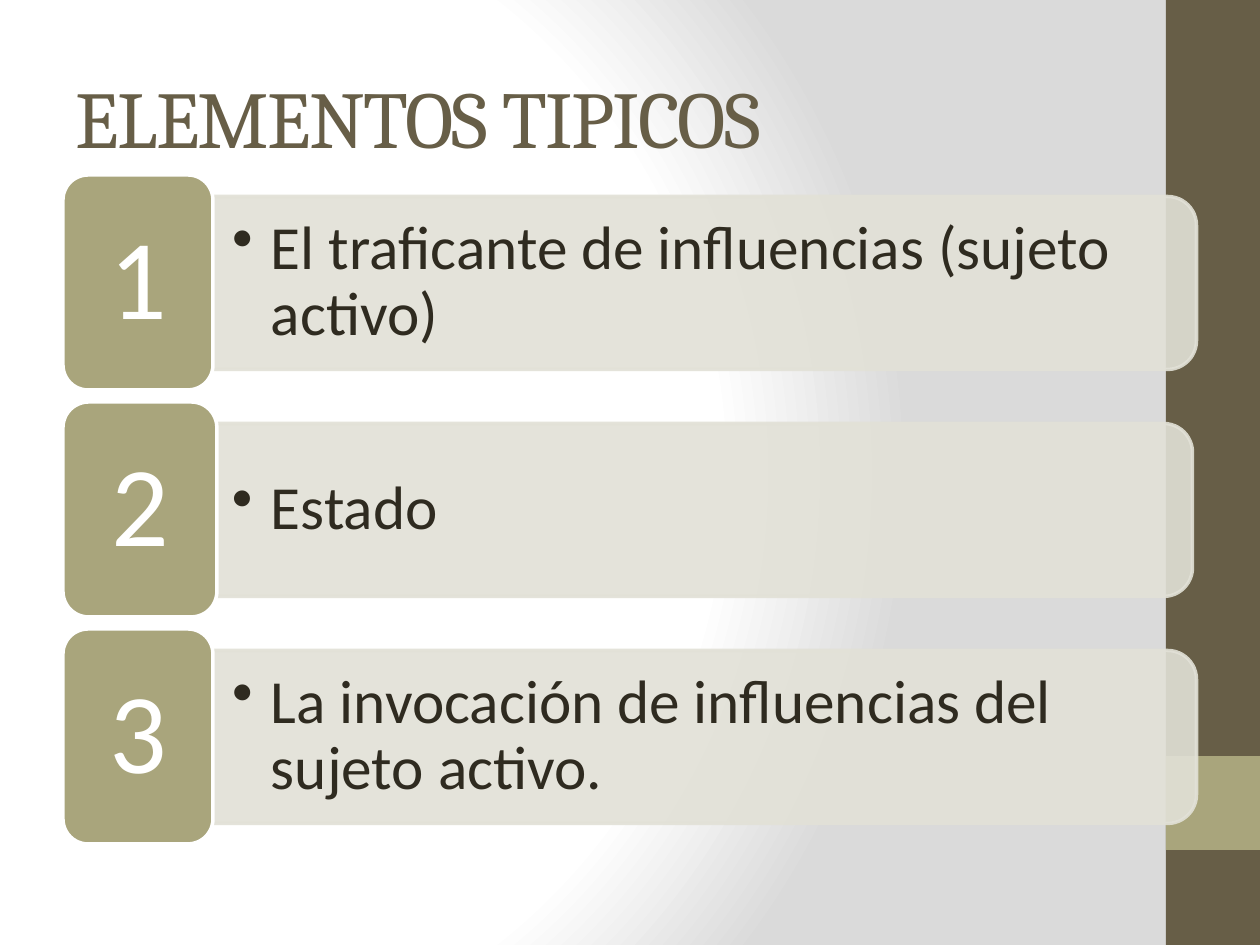
"""Build the slide of three numbered elements."""
from dataclasses import dataclass

from pptx import Presentation
from pptx import util as u
from pptx.dml.color import RGBColor
from pptx.enum import shapes, text
from pptx.oxml import parse_xml
from pptx.oxml.ns import nsdecls, qn
from pptx.oxml.xmlchemy import OxmlElement

SCALE = u.Inches(1) / 126
BROWN, KHAKI, PALE, INK, WHITE = "675E47", "A9A57C", "E2E1D7", "2F2B20", "FFFFFF"
TOP, PITCH = 175, 227
KIND = shapes.MSO_SHAPE


@dataclass
class Box:
    x: int
    y: int
    w: int
    h: int

    def emu(self) -> list[int]:
        """Return the box in EMU."""
        return [px(n) for n in (self.x, self.y, self.w, self.h)]


@dataclass
class Item:
    label: str
    tile: int
    bar: int


ITEMS = [
    Item("El traficante de influencias (sujeto activo)", 150, 984),
    Item("Estado", 154, 980),
    Item("La invocación de influencias del sujeto activo.", 150, 984),
]


def px(n: float) -> int:
    """Turn pixels into EMU."""
    return round(n * SCALE)


def rgb(code: str) -> RGBColor:
    """Turn a hex string into a colour."""
    return RGBColor.from_string(code)


def fade(fill, share: int) -> None:
    """Set the opacity of a solid fill in percent."""
    alpha = OxmlElement("a:alpha")
    alpha.set("val", str(share * 1000))
    fill._xPr.find(qn("a:solidFill"))[0].append(alpha)


def draw(slide, kind, box: Box, color: str, line: str = ""):
    """Add a filled shape, outlined if a line colour is given."""
    shape = slide.shapes.add_shape(kind, *box.emu())
    shape.shadow.inherit = False
    shape.fill.solid()
    shape.fill.fore_color.rgb = rgb(color)
    if line:
        shape.line.color.rgb = rgb(line)
        shape.line.width = u.Pt(2)
    else:
        shape.line.fill.background()
    return shape


def write(shape, words: str, font: str, size: int, color: str, align,
          pad: tuple[int, int]):
    """Put one paragraph in a shape, centred in height."""
    frame = shape.text_frame
    frame.word_wrap = True
    frame.auto_size = text.MSO_AUTO_SIZE.NONE
    frame.vertical_anchor = text.MSO_ANCHOR.MIDDLE
    frame.margin_left = frame.margin_right = px(pad[0])
    frame.margin_top = frame.margin_bottom = px(pad[1])
    para = frame.paragraphs[0]
    para.text = words
    para.alignment = align
    para.font.name, para.font.size = font, u.Pt(size)
    para.font.color.rgb = rgb(color)
    return para


def bullet(para) -> None:
    """Give a paragraph a hanging bullet."""
    props = para._p.get_or_add_pPr()
    props.set("marL", str(px(39)))
    props.set("indent", str(px(-39)))
    mark = OxmlElement("a:buChar")
    mark.set("char", "•")
    props.insert_element_before(mark, "a:tabLst", "a:defRPr", "a:extLst")


def paint(slide) -> None:
    """Fill the background with a circular gradient."""
    stops = "".join(
        f'<a:gs pos="{pos}000"><a:srgbClr val="{code}"/></a:gs>'
        for pos, code in ((0, WHITE), (75, WHITE), (100, "DADADA")))
    slide.element.cSld.insert(0, parse_xml(
        f'<p:bg {nsdecls("p", "a")}><p:bgPr><a:gradFill rotWithShape="1">'
        f'<a:gsLst>{stops}</a:gsLst><a:path path="circle">'
        '<a:fillToRect l="20000" t="50000" r="100000" b="50000"/></a:path>'
        '</a:gradFill><a:effectLst/></p:bgPr></p:bg>'))


def head(slide) -> None:
    """Place and format the title."""
    title = slide.shapes.title
    title.left, title.top, title.width, title.height = Box(63, 38, 1050, 157).emu()
    para = write(title, "ELEMENTOS TIPICOS", "Cambria", 46, BROWN,
                 text.PP_ALIGN.LEFT, (13, 6))
    para.runs[0].font._element.set("spc", "-100")


def row(slide, item: Item, num: int) -> None:
    """Draw one numbered row."""
    top = TOP + (num - 1) * PITCH
    deep = 173
    side = (item.bar - deep) // 2
    bar = draw(slide, KIND.ROUND_2_SAME_RECTANGLE,
               Box(213 + side, top + 21 - side, deep, item.bar), PALE, PALE)
    bar.rotation = 90
    fade(bar.fill, 90)
    fade(bar.line.fill, 90)

    note = slide.shapes.add_textbox(*Box(213, top + 30, item.bar - 9, 156).emu())
    para = write(note, item.label, "Calibri", 35, INK, text.PP_ALIGN.LEFT, (19, 9))
    para.line_spacing = 0.9
    bullet(para)

    tile = draw(slide, KIND.ROUNDED_RECTANGLE,
                Box(63, top, item.tile, 215), KHAKI, WHITE)
    para = write(tile, str(num), "Calibri", 65, WHITE, text.PP_ALIGN.CENTER, (34, 18))
    para.line_spacing = 0.9


def main() -> None:
    """Build and save the deck."""
    deck = Presentation()
    deck.slide_width, deck.slide_height = px(1260), px(945)
    slide = deck.slides.add_slide(deck.slide_layouts[5])
    paint(slide)
    head(slide)
    draw(slide, KIND.RECTANGLE, Box(1166, 0, 94, 945), BROWN)
    draw(slide, KIND.RECTANGLE, Box(1166, 756, 94, 94), KHAKI)
    for num, item in enumerate(ITEMS, 1):
        row(slide, item, num)
    deck.save("out.pptx")


if __name__ == "__main__":
    main()
